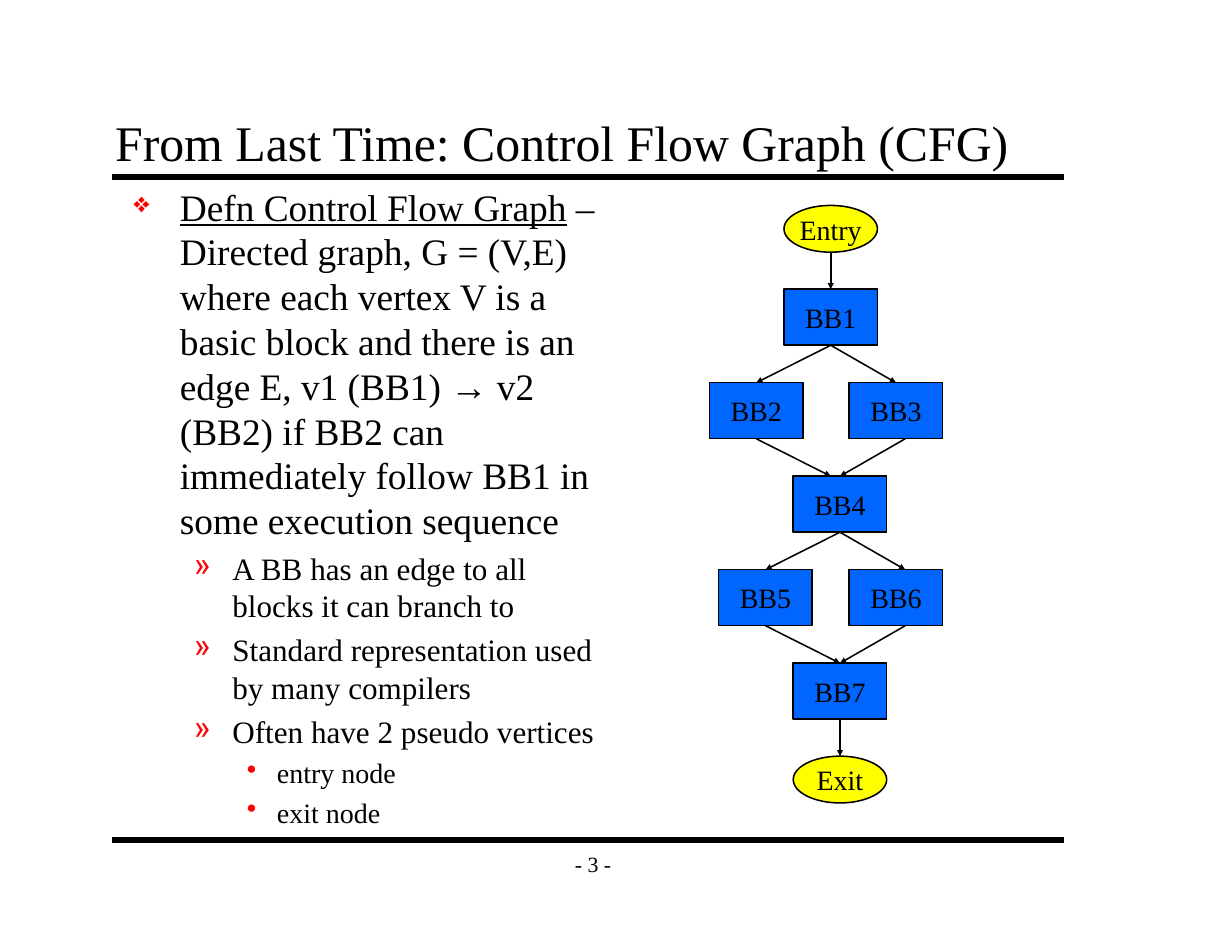
import pptx
import pptx.util
import pptx.dml.color
import pptx.enum.shapes
import pptx.enum.text
import pptx.oxml
import pptx.oxml.ns

Cm, Pt = pptx.util.Cm, pptx.util.Pt

BLACK = pptx.dml.color.RGBColor(0x00, 0x00, 0x00)
RED = pptx.dml.color.RGBColor(0xFF, 0x00, 0x00)
BLUE = pptx.dml.color.RGBColor(0x00, 0x66, 0xFF)
YELLOW = pptx.dml.color.RGBColor(0xFF, 0xFF, 0x00)

ALIGN = pptx.enum.text.PP_ALIGN
ANCHOR = pptx.enum.text.MSO_ANCHOR
SHAPE = pptx.enum.shapes.MSO_SHAPE
FONT = "Times New Roman"

# Bullet, its size in percent, text size, left indent and hanging indent in cm
LEVELS = [("❖", 75, 24, 1.05, 1.05), ("»", 100, 20, 2.24, 0.87), ("•", 100, 18, 3.25, 0.68)]

BODY = [
    (0, [("Defn Control Flow Graph", True),
         (" – Directed graph, G = (V,E) where each vertex V is a basic block and there is "
          "an edge E, v1 (BB1) → v2 (BB2) if BB2 can immediately follow BB1 in some "
          "execution sequence", False)]),
    (1, [("A BB has an edge to all blocks it can branch to", False)]),
    (1, [("Standard representation used by many compilers", False)]),
    (1, [("Often have 2 pseudo vertices", False)]),
    (2, [("entry node", False)]),
    (2, [("exit node", False)]),
]

NODE_WIDTH, BLOCK_HEIGHT, OVAL_HEIGHT = 2.12, 1.27, 1.06
FIRST_ROW, ROW_STEP = 6.56, 2.12
# Block name: (centre, row)
BLOCKS = {
    "BB1": (18.84, 0),
    "BB2": (17.15, 1), "BB3": (20.32, 1),
    "BB4": (19.05, 2),
    "BB5": (17.36, 3), "BB6": (20.32, 3),
    "BB7": (19.05, 4),
}
# Oval name: (centre, top)
OVALS = {"Entry": (18.84, 4.66), "Exit": (19.05, 17.15)}
# Source, target, shift of the start and of the end from the middle of the side
EDGES = [
    ("Entry", "BB1", 0, 0),
    ("BB1", "BB2", 0, 0), ("BB1", "BB3", 0, 0),
    ("BB2", "BB4", 0, -0.21), ("BB3", "BB4", 0.21, 0),
    ("BB4", "BB5", 0, 0), ("BB4", "BB6", 0, 0.21),
    ("BB5", "BB7", 0, 0), ("BB6", "BB7", 0.21, 0),
    ("BB7", "Exit", 0, 0),
]


def add_text(paragraph, text, size=18, underline=False, align=None):
    run = paragraph.add_run()
    run.text = text
    run.font.name = FONT
    run.font.size = Pt(size)
    run.font.color.rgb = BLACK
    if underline:
        run.font.underline = True
    if align is not None:
        paragraph.alignment = align


def add_bullet(paragraph, level):
    character, percent, size, left, hanging = LEVELS[level]
    paragraph.level = level
    paragraph.space_before = Pt(round(size * 0.22, 1))
    properties = paragraph._p.get_or_add_pPr()
    properties.set("marL", str(Cm(left)))
    properties.set("indent", str(-Cm(hanging)))
    namespace = pptx.oxml.ns.nsdecls("a")
    for xml in (f'<a:buClr {namespace}><a:srgbClr val="{RED}"/></a:buClr>',
                f'<a:buSzPct {namespace} val="{percent * 1000}"/>',
                f'<a:buChar {namespace} char="{character}"/>'):
        properties.append(pptx.oxml.parse_xml(xml))


class SlideBuilder:
    def __init__(self, slide):
        self.slide = slide
        self.nodes = {}

    def format_frame(self, frame, anchor, wrap=True):
        frame.word_wrap = wrap
        frame.vertical_anchor = anchor
        frame.margin_left = frame.margin_right = Cm(0.28)
        frame.margin_top = frame.margin_bottom = Cm(0.15)
        return frame.paragraphs[0]

    def title(self, text, left, top, width, height):
        title = self.slide.shapes.title
        title.left, title.top = Cm(left), Cm(top)
        title.width, title.height = Cm(width), Cm(height)
        paragraph = self.format_frame(title.text_frame, ANCHOR.BOTTOM)
        add_text(paragraph, text, size=32, align=ALIGN.LEFT)

    def text_box(self, left, top, width, height, anchor=ANCHOR.TOP, wrap=True):
        box = self.slide.shapes.add_textbox(Cm(left), Cm(top), Cm(width), Cm(height))
        self.format_frame(box.text_frame, anchor, wrap)
        return box.text_frame

    def bullets(self, items, left, top, width, height):
        frame = self.text_box(left, top, width, height)
        for index, (level, runs) in enumerate(items):
            paragraph = frame.add_paragraph() if index else frame.paragraphs[0]
            add_bullet(paragraph, level)
            for text, underline in runs:
                add_text(paragraph, text, size=LEVELS[level][2], underline=underline)

    def node(self, name, kind, center, top, height, color):
        shape = self.slide.shapes.add_shape(
            kind, Cm(center - NODE_WIDTH / 2), Cm(top), Cm(NODE_WIDTH), Cm(height))
        shape.shadow.inherit = False
        shape.fill.solid()
        shape.fill.fore_color.rgb = color
        shape.line.color.rgb = BLACK
        shape.line.width = Pt(1)
        paragraph = self.format_frame(shape.text_frame, ANCHOR.MIDDLE, wrap=False)
        add_text(paragraph, name, align=ALIGN.CENTER)
        self.nodes[name] = shape

    def line(self, x1, y1, x2, y2, width=1):
        connector = self.slide.shapes.add_connector(
            pptx.enum.shapes.MSO_CONNECTOR.STRAIGHT, x1, y1, x2, y2)
        connector.line.color.rgb = BLACK
        connector.line.width = Pt(width)
        connector._element.spPr.append(pptx.oxml.parse_xml(
            f'<a:effectLst {pptx.oxml.ns.nsdecls("a")}/>'))
        return connector

    def edge(self, source_name, target_name, start_shift, end_shift):
        """Draw an arrow from the bottom of one node to the top of another."""
        source, target = self.nodes[source_name], self.nodes[target_name]
        connector = self.line(
            source.left + source.width // 2 + Cm(start_shift), source.top + source.height,
            target.left + target.width // 2 + Cm(end_shift), target.top)
        connector.line._get_or_add_ln().append(pptx.oxml.parse_xml(
            f'<a:tailEnd {pptx.oxml.ns.nsdecls("a")} type="triangle" w="sm" len="sm"/>'))
        if not start_shift and source_name in BLOCKS:
            connector.begin_connect(source, 2)
        if not end_shift:
            connector.end_connect(target, 0)


def main():
    presentation = pptx.Presentation()
    presentation.slide_width, presentation.slide_height = Cm(27.94), Cm(21.59)
    builder = SlideBuilder(presentation.slides.add_slide(presentation.slide_layouts[5]))

    for y in (4.02, 19.05):
        builder.line(Cm(2.54), Cm(y), Cm(24.13), Cm(y), width=4)
    builder.title("From Last Time: Control Flow Graph (CFG)", 2.33, 2.33, 21.59, 1.7)
    builder.bullets(BODY, 2.75, 4.02, 11.22, 14.48)
    page_frame = builder.text_box(12.5, 19.05, 1.9, 1.06, ANCHOR.MIDDLE, wrap=False)
    add_text(page_frame.paragraphs[0], "- 3 -", size=14, align=ALIGN.CENTER)

    for name, (center, row) in BLOCKS.items():
        builder.node(name, SHAPE.RECTANGLE, center, FIRST_ROW + row * ROW_STEP,
                     BLOCK_HEIGHT, BLUE)
    for name, (center, top) in OVALS.items():
        builder.node(name, SHAPE.OVAL, center, top, OVAL_HEIGHT, YELLOW)
    for edge in EDGES:
        builder.edge(*edge)

    presentation.save("out.pptx")


if __name__ == "__main__":
    main()
